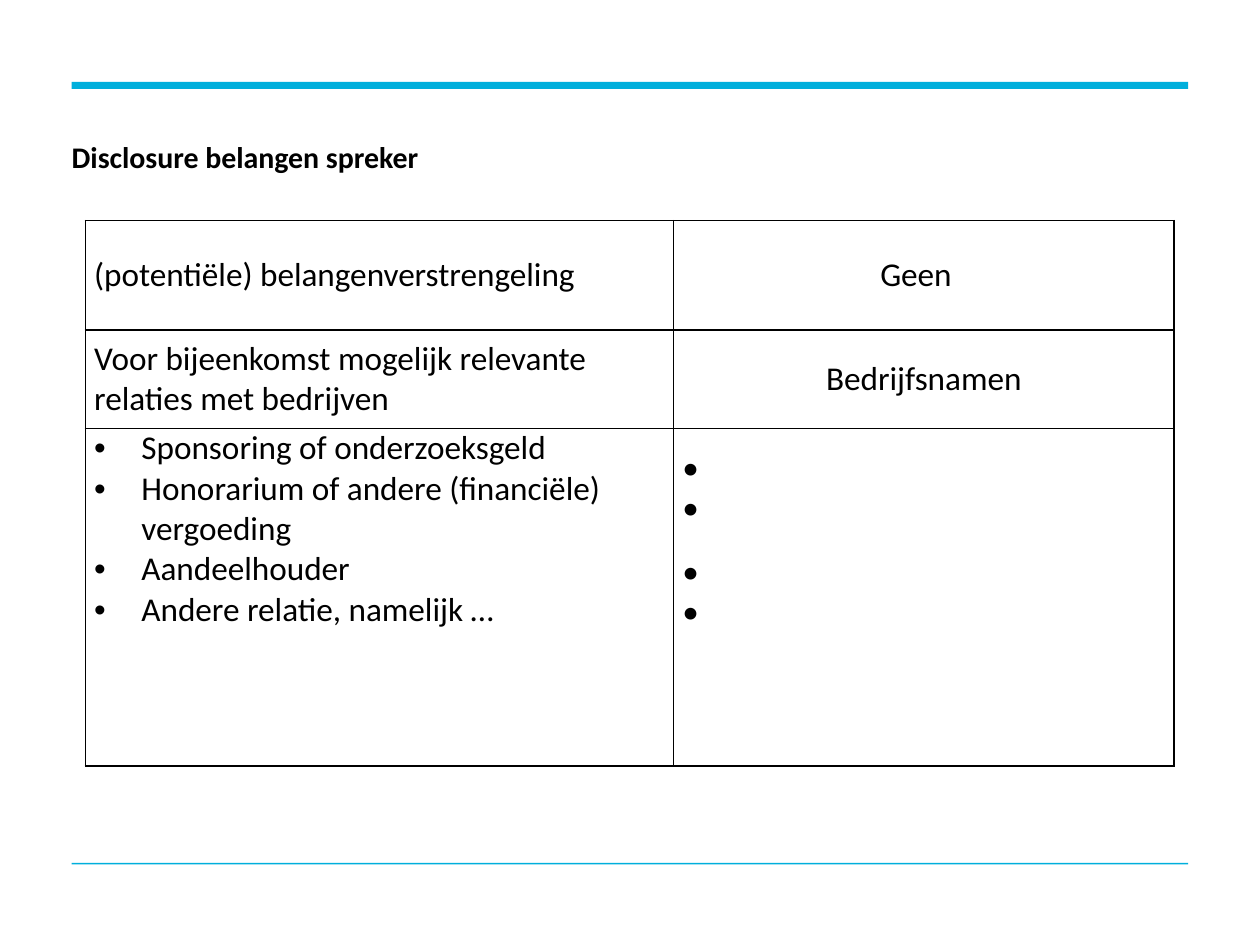
from dataclasses import dataclass

from lxml import etree
from pptx import Presentation
from pptx.dml.color import RGBColor
from pptx.enum.shapes import MSO_SHAPE
from pptx.enum.text import MSO_ANCHOR, MSO_AUTO_SIZE, PP_ALIGN
from pptx.oxml.ns import qn
from pptx.util import Pt

RECTANGLE = MSO_SHAPE.RECTANGLE
TOP, MIDDLE = MSO_ANCHOR.TOP, MSO_ANCHOR.MIDDLE
LEFT, CENTER = PP_ALIGN.LEFT, PP_ALIGN.CENTER
NO_AUTOFIT = MSO_AUTO_SIZE.NONE
TITLE_ONLY = 5


@dataclass(frozen=True)
class Theme:
    font: str = "Calibri"
    bullet_font: str = "Arial"
    accent: RGBColor = RGBColor(0x00, 0xAF, 0xDC)
    ink: RGBColor = RGBColor(0, 0, 0)
    title_size: float = 17.1
    body_size: float = 19


theme = Theme()


def write(frame, text, size=theme.body_size, bold=False, align=LEFT,
          bullet=False, gaps=None):
    """Fill a frame with one paragraph per line; gaps maps line to space before."""
    for index, line in enumerate(text.split("\n")):
        para = frame.paragraphs[0] if index == 0 else frame.add_paragraph()
        para.alignment = align
        para.space_before = Pt((gaps or {}).get(index, 0))
        if bullet:
            properties = para._p.get_or_add_pPr()
            properties.set("marL", str(Pt(27)))
            properties.set("indent", str(-Pt(27)))
            etree.SubElement(properties, qn("a:buFont"), typeface=theme.bullet_font)
            etree.SubElement(properties, qn("a:buChar"), char="•")
        span = para.add_run()
        span.text = line
        span.font.name = theme.font
        span.font.size = Pt(size)
        span.font.bold = bold
        span.font.color.rgb = theme.ink


def add_borders(cell):
    """Draw a one-point line on all four sides of a cell."""
    properties = cell._tc.get_or_add_tcPr()
    for position, side in enumerate(("lnL", "lnR", "lnT", "lnB")):
        line = etree.Element(qn(f"a:{side}"), w=str(Pt(1)))
        fill = etree.SubElement(line, qn("a:solidFill"))
        etree.SubElement(fill, qn("a:srgbClr"), val=str(theme.ink))
        properties.insert(position, line)


deck = Presentation()
deck.slide_width, deck.slide_height = Pt(720), Pt(540)
page = deck.slides.add_slide(deck.slide_layouts[TITLE_ONLY])

# Rules above and below the content
margin, content_width = 41, 638
for top, height in ((46.8, 4), (493, 1)):
    rule = page.shapes.add_shape(
        RECTANGLE, Pt(margin), Pt(top), Pt(content_width), Pt(height))
    rule.shadow.inherit = False
    rule.fill.solid()
    rule.fill.fore_color.rgb = theme.accent
    rule.line.fill.background()

# Title
title = page.shapes.title
title.left, title.top = Pt(margin), Pt(79.2)
title.width, title.height = Pt(content_width), Pt(42)
frame = title.text_frame
frame.auto_size = NO_AUTOFIT
frame.word_wrap = True
frame.vertical_anchor = TOP
frame.margin_left = frame.margin_right = frame.margin_top = frame.margin_bottom = 0
write(frame, "Disclosure belangen spreker", size=theme.title_size, bold=True)

# Disclosure table
column_widths = (336.2, 285.8)
row_heights = (62.6, 56.2, 193)
interests = ("Sponsoring of onderzoeksgeld\n"
             "Honorarium of andere (financiële) vergoeding\n"
             "Aandeelhouder\n"
             "Andere relatie, namelijk …")
rows = (
    (("(potentiële) belangenverstrengeling", {}),
     ("Geen", {"align": CENTER})),
    (("Voor bijeenkomst mogelijk relevante relaties met bedrijven", {}),
     ("Bedrijfsnamen", {"align": CENTER})),
    ((interests, {"bullet": True}),
     ("•\n•\n•\n•", {"gaps": {2: 13.4}})),
)
table = page.shapes.add_table(
    len(rows), len(column_widths), Pt(48.8), Pt(126),
    Pt(sum(column_widths)), Pt(sum(row_heights))).table
table.first_row = table.horz_banding = False
for column, width in zip(table.columns, column_widths):
    column.width = Pt(width)
for row, height in zip(table.rows, row_heights):
    row.height = Pt(height)

for row_index, row in enumerate(rows):
    for column_index, (text, style) in enumerate(row):
        cell = table.cell(row_index, column_index)
        cell.margin_left = cell.margin_right = Pt(5)
        cell.margin_top = cell.margin_bottom = 0
        cell.vertical_anchor = TOP if row_index == 2 else MIDDLE
        cell.fill.background()
        add_borders(cell)
        write(cell.text_frame, text, **style)

# Optical offsets in the answer column
table.cell(0, 1).margin_right = Pt(14)
table.cell(2, 1).margin_top = Pt(11)

deck.save("out.pptx")
